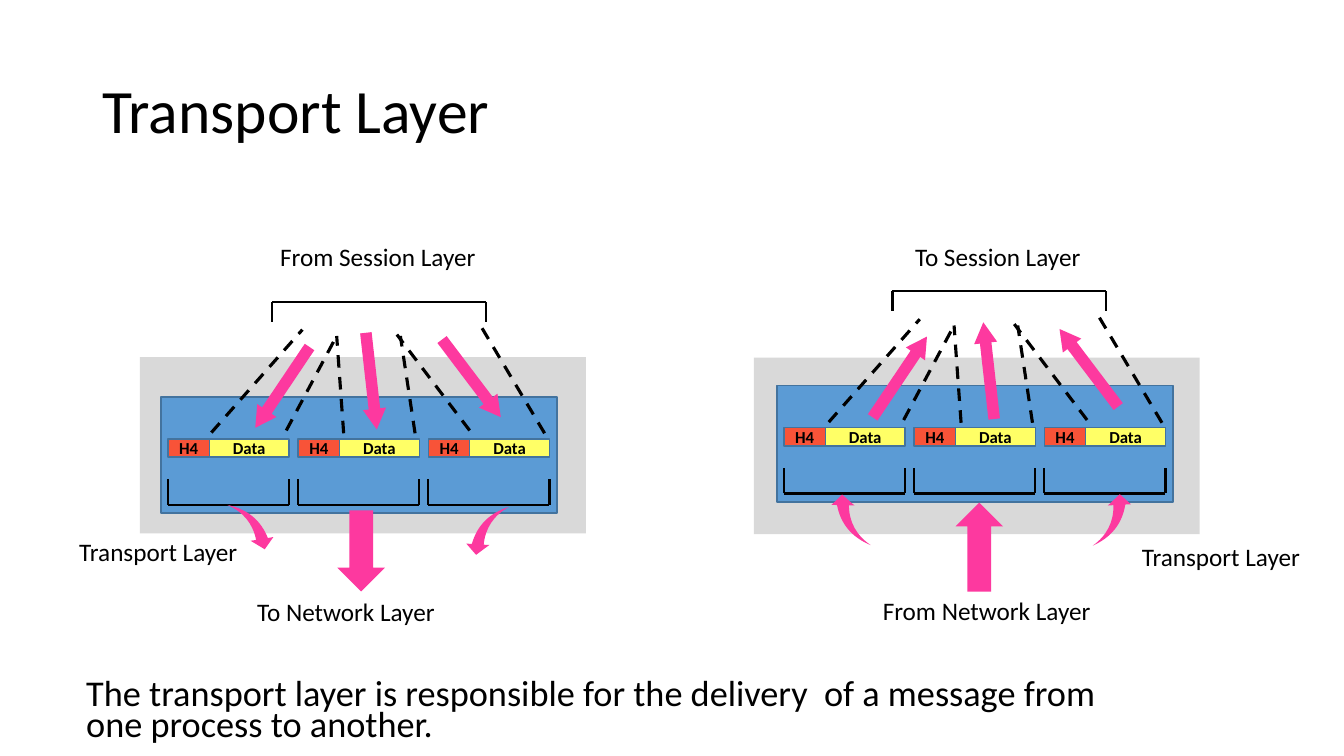
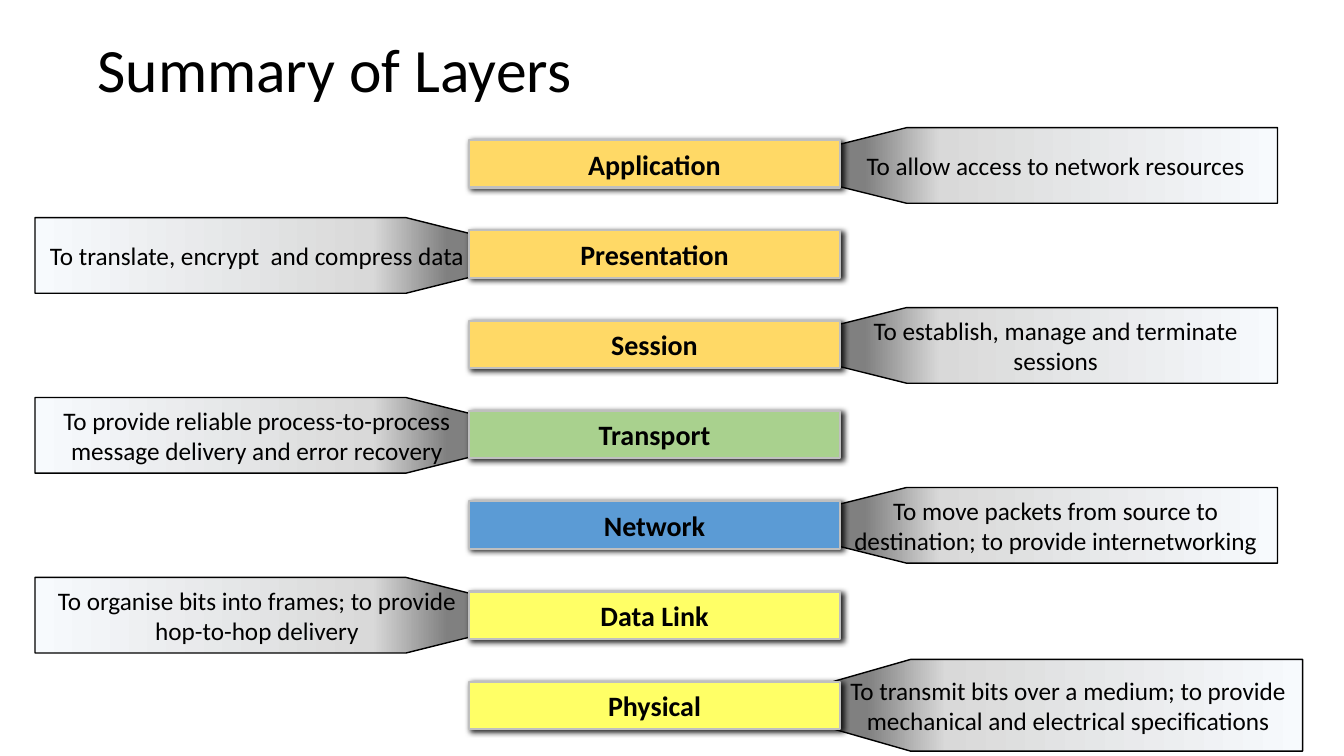
import copy

import pptx
import pptx.dml.color
import pptx.enum.dml
import pptx.enum.shapes
import pptx.enum.text
import pptx.oxml
import pptx.oxml.ns
import pptx.util

Pt = pptx.util.Pt
Shape = pptx.enum.shapes.MSO_SHAPE
Align = pptx.enum.text.PP_ALIGN
Anchor = pptx.enum.text.MSO_ANCHOR
qn = pptx.oxml.ns.qn

INK = {
    "black": "000000", "grey": "D9D9D9", "silver": "BFBFBF",
    "blue": "5B9BD5", "edge": "43739E", "yellow": "FFFF66",
    "red": "F85338", "pink": "FD399F", "gold": "FFD966",
    "green": "A9D18E", "dark": "808080", "pale": "F7FAFD",
}
FADE = [(0.07, "dark"), (0.24, "grey"), (1, "pale")]


def tint(name):
    return pptx.dml.color.RGBColor.from_string(INK[name])


def effects(shape, inner=""):
    """Replace the theme shadow with the given effects."""
    space = pptx.oxml.ns.nsdecls("a")
    shape._element.spPr.append(pptx.oxml.parse_xml(
        f"<a:effectLst {space}>{inner}</a:effectLst>"))


class Deck:
    font = "Calibri"

    def __init__(self):
        self.show = pptx.Presentation()
        self.show.slide_width, self.show.slide_height = Pt(960), Pt(540)
        self.slide = None

    def page(self, title, x, y, w, h):
        self.slide = self.show.slides.add_slide(self.show.slide_layouts[5])
        head = self.slide.shapes.title
        head.left, head.top, head.width, head.height = map(Pt, (x, y, w, h))
        head.text_frame.auto_size = pptx.enum.text.MSO_AUTO_SIZE.NONE
        self.words(head, title, 44, align=Align.LEFT, space=0.9)

    def words(self, shape, text, size, bold=False, align=Align.CENTER,
              anchor=Anchor.MIDDLE, wrap=True, space=None):
        frame = shape.text_frame
        frame.text = text
        frame.word_wrap, frame.vertical_anchor = wrap, anchor
        for para in frame.paragraphs:
            para.alignment = align
            if space:
                para.line_spacing = space
            for run in para.runs:
                font = run.font
                font.name, font.size, font.bold = self.font, Pt(size), bold
                font.color.rgb = tint("black")

    def label(self, text, x, y, w, h=29, size=18, wrap=False, space=None):
        box = self.slide.shapes.add_textbox(Pt(x), Pt(y), Pt(w), Pt(h))
        self.words(box, text, size, align=Align.LEFT, anchor=Anchor.TOP,
                   wrap=wrap, space=space)

    def shape(self, kind, x, y, w, h, fill, edge=None, width=1, turn=0,
              bends=()):
        item = self.slide.shapes.add_shape(kind, Pt(x), Pt(y), Pt(w), Pt(h))
        item.shadow.inherit = False
        item.fill.solid()
        item.fill.fore_color.rgb = tint(fill)
        if edge:
            item.line.color.rgb = tint(edge)
            item.line.width = Pt(width)
        else:
            item.line.fill.background()
        item.rotation = turn
        for i, bend in enumerate(bends):
            item.adjustments[i] = bend
        return item

    def cell(self, text, x, y, w, h, fill):
        box = self.shape(Shape.RECTANGLE, x, y, w, h, fill, "edge")
        frame = box.text_frame
        frame.margin_left = frame.margin_right = 0
        frame.margin_top = frame.margin_bottom = 0
        self.words(box, text, 12, bold=True)

    def swoosh(self, x, y, turn, flip):
        item = self.shape(Shape.SWOOSH_ARROW, x, y, 33, 31.7, "pink",
                          turn=turn, bends=(0.266, 0.25))
        if flip:
            item._element.spPr.find(qn("a:xfrm")).set("flipV", "1")

    def line(self, x1, y1, x2, y2, width=1.5, dash=False):
        item = self.slide.shapes.add_connector(
            pptx.enum.shapes.MSO_CONNECTOR.STRAIGHT,
            Pt(x1), Pt(y1), Pt(x2), Pt(y2))
        item.line.color.rgb = tint("black")
        item.line.width = Pt(width)
        if dash:
            item.line.dash_style = pptx.enum.dml.MSO_LINE.DASH
        effects(item)

    def bracket(self, x, y, w, tick):
        self.line(x, y, x, y + tick)
        self.line(x + w, y, x + w, y + tick)
        self.line(x, y, x + w, y)

    def callout(self, text, x, y, w, h, left):
        """Box whose tapered end points at the centre column."""
        near, far, neck = (x + w, x, x + 0.836 * w) if left else (
            x, x + w, x + 0.164 * w)
        rim = 0.24 * h
        spots = [(far, y), (far, y + h), (neck, y + h),
                 (near, y + h - rim), (near, y + rim)]
        pen = self.slide.shapes.build_freeform(Pt(neck), Pt(y))
        pen.add_line_segments([(Pt(a), Pt(b)) for a, b in spots], close=True)
        item = pen.convert_to_shape()
        item.shadow.inherit = False
        item.line.color.rgb = tint("black")
        item.line.width = Pt(1)
        item.fill.gradient()
        item.fill.gradient_angle = 180 if left else 0
        stops = item._element.spPr.find(".//" + qn("a:gsLst"))
        stops.append(copy.deepcopy(stops[0]))
        for stop, (place, name) in zip(item.fill.gradient_stops, FADE):
            stop.position = place
            stop.color.rgb = tint(name)
        self.words(item, text, 18)

    def plate(self, text, x, y, w, h, fill):
        box = self.shape(Shape.RECTANGLE, x, y, w, h, fill, "silver", 1.5)
        box._element.spPr.remove(box._element.spPr.find(qn("a:effectLst")))
        effects(box, f'<a:outerShdw blurRad="{Pt(4)}" dist="{Pt(2)}" '
                     'dir="1800000" algn="ctr" rotWithShape="0">'
                     f'<a:srgbClr val="{INK["black"]}">'
                     '<a:alpha val="85000"/></a:srgbClr></a:outerShdw>')
        self.words(box, text, 20, bold=True)


# Dashed guides and arrows of the left panel; the right panel shifts them
GUIDES = [
    (151, 309, 216, 235.5), (204.5, 307.5, 241, 239),
    (245.5, 309.5, 240.5, 240), (296.5, 309.5, 286, 240),
    (335.5, 307.5, 283.5, 239), (389, 309.5, 343.5, 233),
]
ARROWS = [(193.5, 242, 33.9), (257, 237.5, 353.6), (328.5, 235.5, 322.9)]


def panel(deck, x, y, roof, shift, turn, swoops, big, labels):
    # Layer box with three segments
    deck.shape(Shape.RECTANGLE, x, y, 283, 83, "blue", "edge")
    for i in range(3):
        left = x + 5 + 93 * i
        deck.cell("H4", left, y + 30, 29.5, 13, "red")
        deck.cell("Data", left + 29.5, y + 30, 57, 13, "yellow")
        deck.bracket(left, y + 77, 86.5, -18)

    # Message above, split into segments
    deck.bracket(*roof, 152.5, 14)
    dx, dy = shift
    for x1, y1, x2, y2 in GUIDES:
        deck.line(x1 + dx, y1 + dy, x2 + dx, y2 + dy, 2.25, dash=True)
    for left, top, angle in ARROWS:
        deck.shape(Shape.DOWN_ARROW, left + dx, top + dy, 16.5, 69.5, "pink",
                   turn=(angle + turn) % 360, bends=(0.5, 0.898))

    # Arrows to or from the layer below
    for i, swoop in enumerate(swoops):
        deck.swoosh(*swoop, flip=i == 1)
    deck.shape(Shape.DOWN_ARROW, *big, "pink", turn=turn)
    for label in labels:
        deck.label(*label)


def transport(deck):
    deck.page("Transport Layer", 66, 29, 828, 104.5)
    deck.label("The transport layer is responsible for the delivery  of a "
               "message from one process to another.",
               54.5, 484, 752.5, 54.5, 25.9, wrap=True, space=0.7)
    for x, y in ((538.5, 255.5), (100, 255)):
        deck.shape(Shape.RECTANGLE, x, y, 318.5, 126, "grey")
    panel(deck, 115, 283.5, (194.5, 216), (0, 0), 0,
          [(162.5, 360.5, 87.1), (332, 363.5, 87.1)], (241, 364.5, 34, 58),
          [("From Session Layer", 193, 168.5, 155.5),
           ("Transport Layer", 49.5, 379.5, 129),
           ("To Network Layer", 176.5, 422.5, 142.5)])
    panel(deck, 555, 275.5, (637.5, 208), (441, -7.5), 180,
          [(592, 355, 277.9), (777, 355, 260.4)], (682.5, 359, 34, 63.5),
          [("To Session Layer", 646.5, 168.5, 134),
           ("Transport Layer", 808.5, 383, 129),
           ("From Network Layer", 623.5, 422, 164)])


LAYERS = [
    ("Application", "gold", "To allow access to network resources"),
    ("Presentation", "gold", "To translate, encrypt  and compress data"),
    ("Session", "gold", "To establish, manage and terminate sessions"),
    ("Transport", "green", "To provide reliable process-to-process message "
     "delivery and error recovery"),
    ("Network", "blue", "To move packets from source to destination; "
     "to provide internetworking"),
    ("Data Link", "yellow", "To organise bits into frames; to provide "
     "hop-to-hop delivery"),
    ("Physical", "yellow", "To transmit bits over a medium; to provide "
     "mechanical and electrical specifications"),
]


def summary(deck):
    deck.page("Summary of Layers", 62.5, -0.5, 706.5, 104.5)
    # Callouts alternate right and left; the last one is larger
    for i, (name, fill, task) in enumerate(LAYERS):
        left = i % 2 == 1
        y, w, h = 91.2 + 64.25 * i, 317, 54
        if i == len(LAYERS) - 1:
            y, w, h = 471, 335, 65.5
        deck.callout(task, 25 if left else 595.5, y, w, h, left)
    for i, (name, fill, task) in enumerate(LAYERS):
        deck.plate(name, 335, 100 + 64.5 * i, 265, 34, fill)


def main():
    deck = Deck()
    transport(deck)
    summary(deck)
    deck.show.save("out.pptx")


if __name__ == "__main__":
    main()
